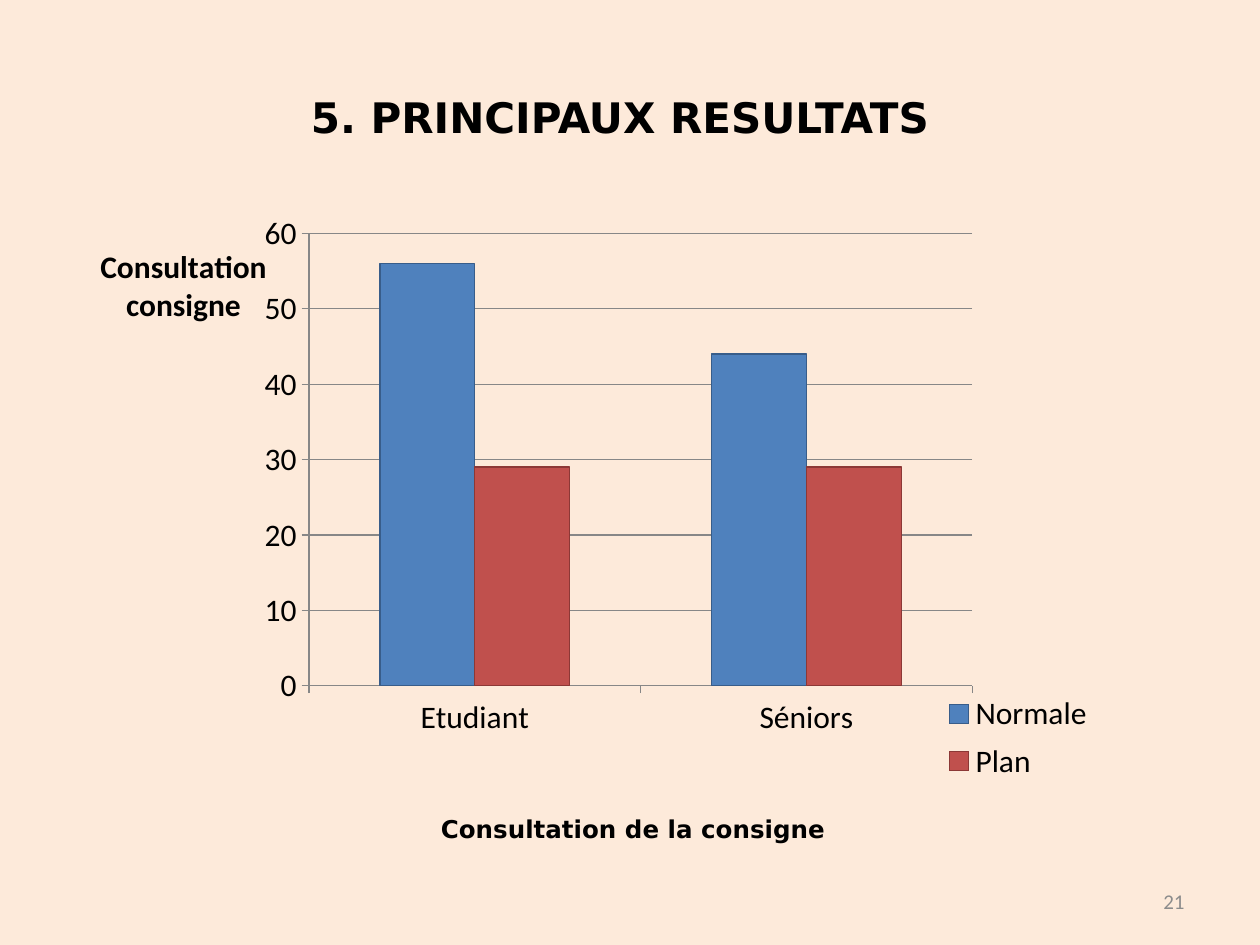
from lxml import etree
from pptx import Presentation
from pptx.chart.data import CategoryChartData
from pptx.dml.color import RGBColor
from pptx.enum.chart import XL_CHART_TYPE, XL_LEGEND_POSITION, XL_TICK_MARK
from pptx.enum.text import MSO_ANCHOR, PP_ALIGN
from pptx.oxml.ns import qn
from pptx.util import Inches, Pt

CLUSTERED = XL_CHART_TYPE.COLUMN_CLUSTERED
LEGEND_RIGHT = XL_LEGEND_POSITION.RIGHT
TICK_OUT = XL_TICK_MARK.OUTSIDE
CENTER, RIGHT = PP_ALIGN.CENTER, PP_ALIGN.RIGHT
TOP, MIDDLE = MSO_ANCHOR.TOP, MSO_ANCHOR.MIDDLE

PEACH = RGBColor(0xFD, 0xEA, 0xDA)
BLACK = RGBColor(0, 0, 0)
PAGE_GRAY = RGBColor(0x8C, 0x8C, 0x8C)
AXIS_GRAY = RGBColor(0x87, 0x87, 0x87)
BLUE, DARK_BLUE = RGBColor(0x4F, 0x81, 0xBD), RGBColor(0x38, 0x5D, 0x8A)
RED, DARK_RED = RGBColor(0xC0, 0x50, 0x4D), RGBColor(0x8C, 0x38, 0x36)

WIDTH, HEIGHT = Inches(10), Inches(7.5)
HEADING_FONT, BODY_FONT = "DejaVu Sans", "Calibri"
GROUPS = ["Etudiant", "Séniors"]
CONSULTATIONS = [
    ("Normale", (56, 44), BLUE, DARK_BLUE),
    ("Plan", (29, 29), RED, DARK_RED),
]


def place(left, top, width, height):
    return (int(WIDTH * left), int(HEIGHT * top),
            int(WIDTH * width), int(HEIGHT * height))


def style_font(font, name, size, color, bold=False):
    font.name, font.size, font.bold = name, Pt(size), bold
    font.color.rgb = color


def add_label(slide, box, text, name, size, color, bold, align, anchor):
    label = slide.shapes.add_textbox(*place(*box))
    frame = label.text_frame
    frame.word_wrap = True
    frame.vertical_anchor = anchor
    paragraph = frame.paragraphs[0]
    paragraph.alignment = align
    run = paragraph.add_run()
    run.text = text
    style_font(run.font, name, size, color, bold)
    return label


def set_layout(parent, index, inner=False, **shares):
    for previous in parent.findall(qn("c:layout")):
        parent.remove(previous)
    layout = etree.Element(qn("c:layout"))
    manual = etree.SubElement(layout, qn("c:manualLayout"))
    if inner:
        etree.SubElement(manual, qn("c:layoutTarget")).set("val", "inner")
    for axis in ("x", "y"):
        etree.SubElement(manual, qn(f"c:{axis}Mode")).set("val", "edge")
    for key, share in shares.items():
        etree.SubElement(manual, qn(f"c:{key}")).set("val", str(share))
    parent.insert(index, layout)


def style_axis(axis):
    axis.major_tick_mark = TICK_OUT
    axis.format.line.color.rgb = AXIS_GRAY
    axis.format.line.width = Pt(0.75)


def title_value_axis(axis, text):
    title = axis.axis_title
    frame = title.text_frame
    run = frame.paragraphs[0].add_run()
    run.text = text
    style_font(run.font, BODY_FONT, 18, BLACK, True)
    body = title._element.find(".//" + qn("a:bodyPr"))
    body.set("rot", "0")
    body.set("vert", "horz")
    set_layout(title._element, 1, x=0.01, y=0.04)


def add_consultation_chart(slide, box):
    data = CategoryChartData()
    data.categories = GROUPS
    for name, values, _, _ in CONSULTATIONS:
        data.add_series(name, values)
    chart = slide.shapes.add_chart(CLUSTERED, *place(*box), data).chart
    style_font(chart.font, BODY_FONT, 18, BLACK)
    chart.has_title = False

    plot = chart.plots[0]
    plot.gap_width, plot.overlap = 150, 0
    plot.vary_by_categories = False
    for series, (_, _, fill, outline) in zip(plot.series, CONSULTATIONS):
        series.format.fill.solid()
        series.format.fill.fore_color.rgb = fill
        series.format.line.color.rgb = outline
        series.format.line.width = Pt(0.75)

    values = chart.value_axis
    style_axis(chart.category_axis)
    style_axis(values)
    values.minimum_scale, values.maximum_scale = 0, 60
    values.major_unit = 10
    values.has_major_gridlines = True
    gridline = values.major_gridlines.format.line
    gridline.color.rgb, gridline.width = AXIS_GRAY, Pt(0.75)
    title_value_axis(values, "Consultation consigne")

    chart.has_legend = True
    chart.legend.position = LEGEND_RIGHT
    chart.legend.include_in_layout = False
    set_layout(chart.legend._element, 1, x=0.83, y=0.82, w=0.17, h=0.18)
    plot_area = chart._chartSpace.find(".//" + qn("c:plotArea"))
    set_layout(plot_area, 0, inner=True, x=0.22, y=0.03, w=0.65, h=0.79)


def main():
    presentation = Presentation()
    presentation.slide_width, presentation.slide_height = WIDTH, HEIGHT
    slide = presentation.slides.add_slide(presentation.slide_layouts[6])
    slide.background.fill.solid()
    slide.background.fill.fore_color.rgb = PEACH

    heading = add_label(slide, (0.177, 0.04, 0.63, 0.167), "5. PRINCIPAUX RESULTATS",
                        HEADING_FONT, 24, BLACK, True, CENTER, MIDDLE)
    heading.fill.solid()
    heading.fill.fore_color.rgb = PEACH
    add_label(slide, (0.717, 0.927, 0.233, 0.053), "21",
              BODY_FONT, 12, PAGE_GRAY, False, RIGHT, MIDDLE)
    add_label(slide, (0.209, 0.855, 0.587, 0.045), "Consultation de la consigne",
              HEADING_FONT, 14, BLACK, True, CENTER, TOP)
    add_consultation_chart(slide, (0.067, 0.227, 0.81, 0.608))
    presentation.save("out.pptx")


if __name__ == "__main__":
    main()
